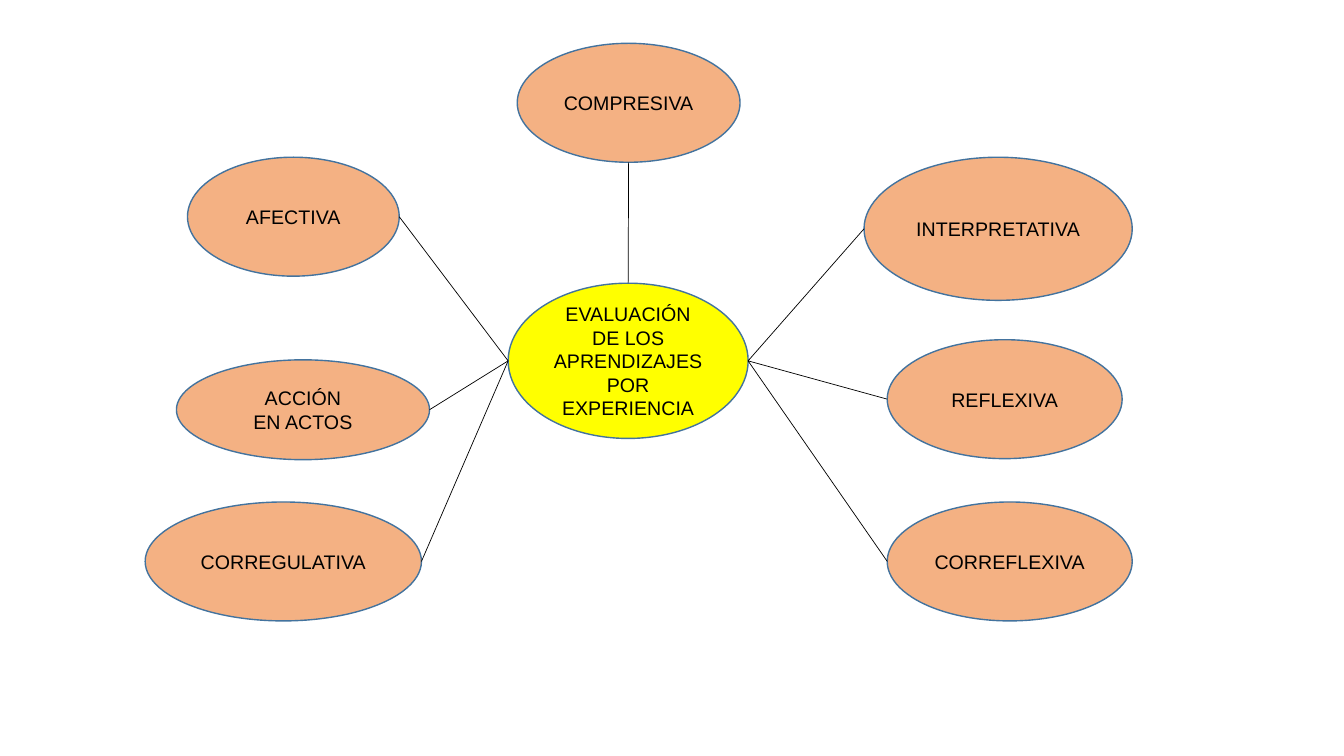
from lxml.etree import SubElement
from pptx import Presentation
from pptx.dml.color import RGBColor
from pptx.enum.shapes import MSO_CONNECTOR, MSO_SHAPE
from pptx.enum.text import MSO_ANCHOR, PP_ALIGN
from pptx.oxml.ns import qn
from pptx.util import Inches, Pt

# Text, box (left, top, width, height in inches), side of the hub it joins
HUB = ("EVALUACIÓN DE LOS APRENDIZAJES POR EXPERIENCIA", (5.04, 2.81, 2.38, 1.54))
BRANCHES = [
    ("COMPRESIVA", (5.13, 0.43, 2.21, 1.18), "top"),
    ("INTERPRETATIVA", (8.57, 1.56, 2.66, 1.42), "right"),
    ("REFLEXIVA", (8.8, 3.37, 2.33, 1.18), "right"),
    ("CORREFLEXIVA", (8.8, 4.98, 2.43, 1.18), "right"),
    ("AFECTIVA", (1.86, 1.56, 2.1, 1.18), "left"),
    ("ACCIÓN\nEN ACTOS", (1.75, 3.57, 2.51, 0.99), "left"),
    ("CORREGULATIVA", (1.44, 4.98, 2.74, 1.18), "left"),
]
# Points on an ellipse, as shares of its width and height
ANCHORS = {"top": (0.5, 0), "bottom": (0.5, 1), "left": (0, 0.5), "right": (1, 0.5)}
OPPOSITE = {"top": "bottom", "left": "right", "right": "left"}
YELLOW, ORANGE, BLUE, BLACK = "FFFF00", "F4B183", "43739E", "000000"


def color(value):
    return RGBColor.from_string(value)


def add_ellipse(page, text, box, fill):
    ellipse = page.shapes.add_shape(MSO_SHAPE.OVAL, *map(Inches, box))
    ellipse.shadow.inherit = False
    ellipse.fill.solid()
    ellipse.fill.fore_color.rgb = color(fill)
    ellipse.line.color.rgb = color(BLUE)
    ellipse.line.width = Pt(1)
    frame = ellipse.text_frame
    frame.word_wrap = True
    frame.vertical_anchor = MSO_ANCHOR.MIDDLE
    frame.text = text
    for para in frame.paragraphs:
        para.alignment = PP_ALIGN.CENTER
        para.font.name = "Arial"
        para.font.size = Pt(14)
        para.font.color.rgb = color(BLACK)


def anchor_point(box, side):
    left, top, width, height = box
    across, down = ANCHORS[side]
    return Inches(left + across * width), Inches(top + down * height)


def add_link(page, start, end):
    link = page.shapes.add_connector(MSO_CONNECTOR.STRAIGHT, *start, *end)
    link.line.color.rgb = color(BLACK)
    link.line.width = Pt(0.5)
    SubElement(link._element.spPr, qn("a:effectLst"))


def main():
    deck = Presentation()
    deck.slide_width, deck.slide_height = Inches(13.33), Inches(7.5)
    page = deck.slides.add_slide(deck.slide_layouts[6])
    hub_text, hub_box = HUB
    add_ellipse(page, hub_text, hub_box, YELLOW)
    for text, box, side in BRANCHES:
        add_ellipse(page, text, box, ORANGE)
        add_link(page, anchor_point(hub_box, side), anchor_point(box, OPPOSITE[side]))
    deck.save("out.pptx")


if __name__ == "__main__":
    main()
